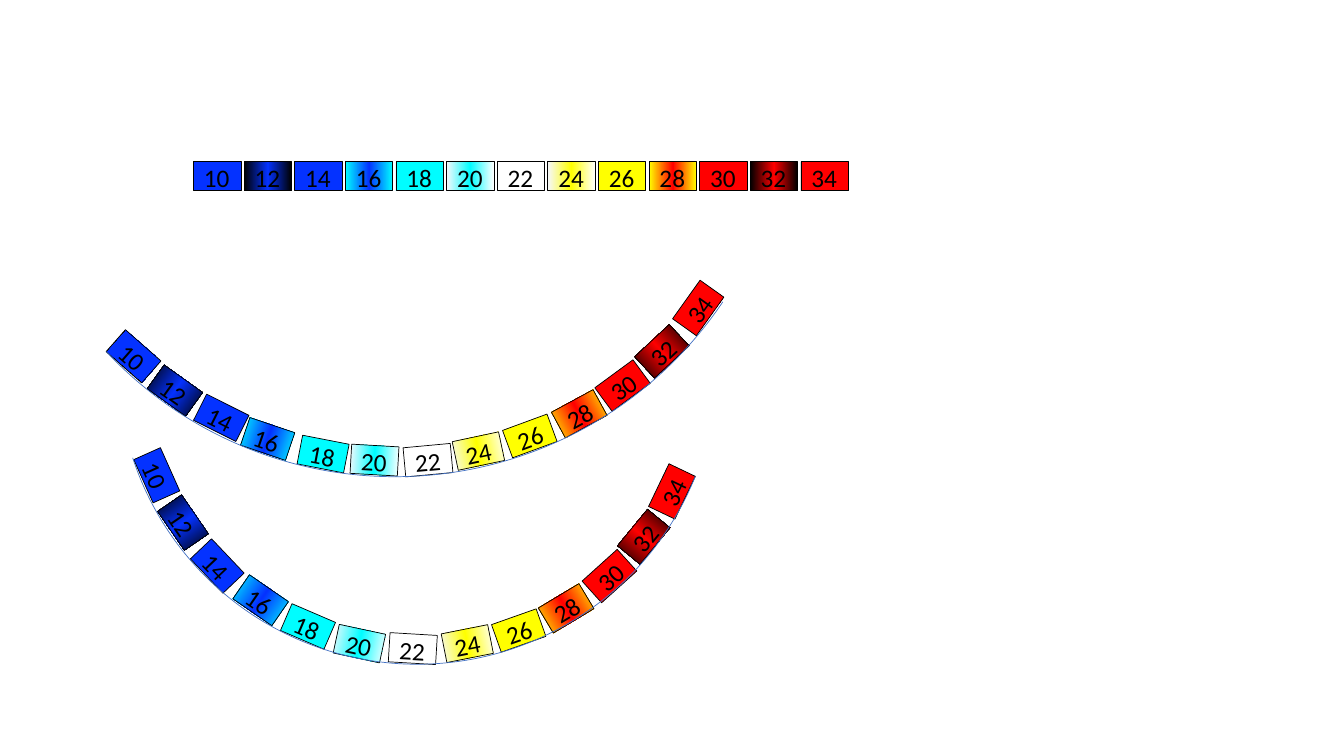
from math import cos, radians, sin

from lxml import etree
from pptx import Presentation
from pptx import util as u
from pptx.dml.color import RGBColor
from pptx.enum import dml, shapes, text
from pptx.oxml.ns import qn

COLS, ROWS = 1333, 750
CELL = u.Inches(0.01)
WIDE, HIGH = 47, 29
BOX_W, BOX_H = 46, 40
DROP = 1.5

BLACK, WHITE, PALE = "000000", "FFFFFF", "F6F8FC"
BLUE, CYAN, GOLD, RED = "0432FF", "00FDFF", "FFFF00", "FF0000"
RIM = "4472C4"

FILLS = [
    ("weave", BLUE, BLACK),
    ("blend", BLACK, BLUE, BLACK),
    ("plain", BLUE),
    ("blend", CYAN, BLUE, CYAN),
    ("plain", CYAN),
    ("blend", PALE, CYAN, WHITE),
    ("none",),
    ("blend", PALE, GOLD, WHITE),
    ("plain", GOLD),
    ("blend", GOLD, RED, GOLD),
    ("plain", RED),
    ("blend", BLACK, RED, BLACK),
    ("weave", RED, BLACK),
]

ROW = [(192 + 50.2 * i, 160.3, 0) for i in range(len(FILLS))]
WIDE_BOW = [
    (109, 339, 41.3), (150, 373, 35.6), (196, 400, 26.6), (242, 421, 18.7),
    (297, 436, 11), (348, 442, 3.3), (401, 442, -5.3), (451, 433, -12),
    (502, 418, -20.2), (551, 396, -28.5), (594, 368, -36.3),
    (633, 334, -43), (669, 291, -54.5),
]
DEEP_BOW = [
    (132, 457, 65.9), (158, 504, 55.5), (192, 547, 46.5), (235, 581, 34.6),
    (282, 607, 23.3), (333, 624, 12.1), (386, 629, 3.4), (440, 624, -11.2),
    (491, 611, -19.5), (538, 589, -31), (581, 557, -42.1),
    (615, 518, -50.6), (643, 473, -64.4),
]


def color(code):
    return RGBColor.from_string(code)


def cells(*sizes):
    return [round(size * CELL) for size in sizes]


def blend(fill, hues):
    fill.gradient()
    fill.gradient_angle = 0
    stops = fill._fill._gradFill.find(qn("a:gsLst"))
    for stop in list(stops):
        stops.remove(stop)
    for i, hue in enumerate(hues):
        stop = etree.SubElement(stops, qn("a:gs"), pos=str(i * 50000))
        etree.SubElement(stop, qn("a:srgbClr"), val=hue)


def paint(fill, kind, *hues):
    if kind == "blend":
        blend(fill, hues)
    elif kind == "weave":
        fill.patterned()
        fill.pattern = dml.MSO_PATTERN.DARK_VERTICAL
        fill.fore_color.rgb, fill.back_color.rgb = map(color, hues)
    elif kind == "plain":
        fill.solid()
        fill.fore_color.rgb = color(hues[0])
    else:
        fill.background()


def form(tree, kind, spot, look, edge):
    shape = tree.add_shape(kind, *cells(*spot))
    shape.shadow.inherit = False
    paint(shape.fill, *look)
    shape.line.color.rgb = color(edge)
    shape.line.width = u.Pt(0.5)
    return shape


def label(tree, x, y, turn, words):
    box = tree.add_textbox(*cells(x - BOX_W / 2, y - BOX_H / 2, BOX_W, BOX_H))
    box.rotation = turn
    frame = box.text_frame
    frame.word_wrap = False
    frame.auto_size = text.MSO_AUTO_SIZE.SHAPE_TO_FIT_TEXT
    run = frame.paragraphs[0].add_run()
    run.text = words
    run.font.name = "Calibri"
    run.font.size = u.Pt(18)
    run.font.color.rgb = color(BLACK)


def tile(tree, x, y, turn, look, words):
    rect = form(tree, shapes.MSO_SHAPE.RECTANGLE, (x, y, WIDE, HIGH), look, BLACK)
    rect.rotation = turn
    tilt = radians(turn)
    mid_x = x + WIDE / 2 - DROP * sin(tilt)
    mid_y = y + HIGH / 2 + DROP * cos(tilt)
    label(tree, mid_x, mid_y, turn, words)


def strip(tree, spots):
    group = tree.add_group_shape().shapes
    for i, (spot, look) in enumerate(zip(spots, FILLS)):
        tile(group, *spot, look, str(10 + 2 * i))


def rim(tree, spot, start, end):
    arc = form(tree, shapes.MSO_SHAPE.ARC, spot, ("none",), RIM)
    arc.adjustments[0] = start * 0.6
    arc.adjustments[1] = end * 0.6


def main():
    deck = Presentation()
    deck.slide_width, deck.slide_height = cells(COLS, ROWS)
    tree = deck.slides.add_slide(deck.slide_layouts[6]).shapes
    for spots in (WIDE_BOW, ROW, DEEP_BOW):
        strip(tree, spots)
    rim(tree, (117, 65, 594, 594), 21.79, 161.91)
    rim(tree, (-1, -314, 785, 787), 34.06, 136.71)
    deck.save("out.pptx")


if __name__ == "__main__":
    main()
